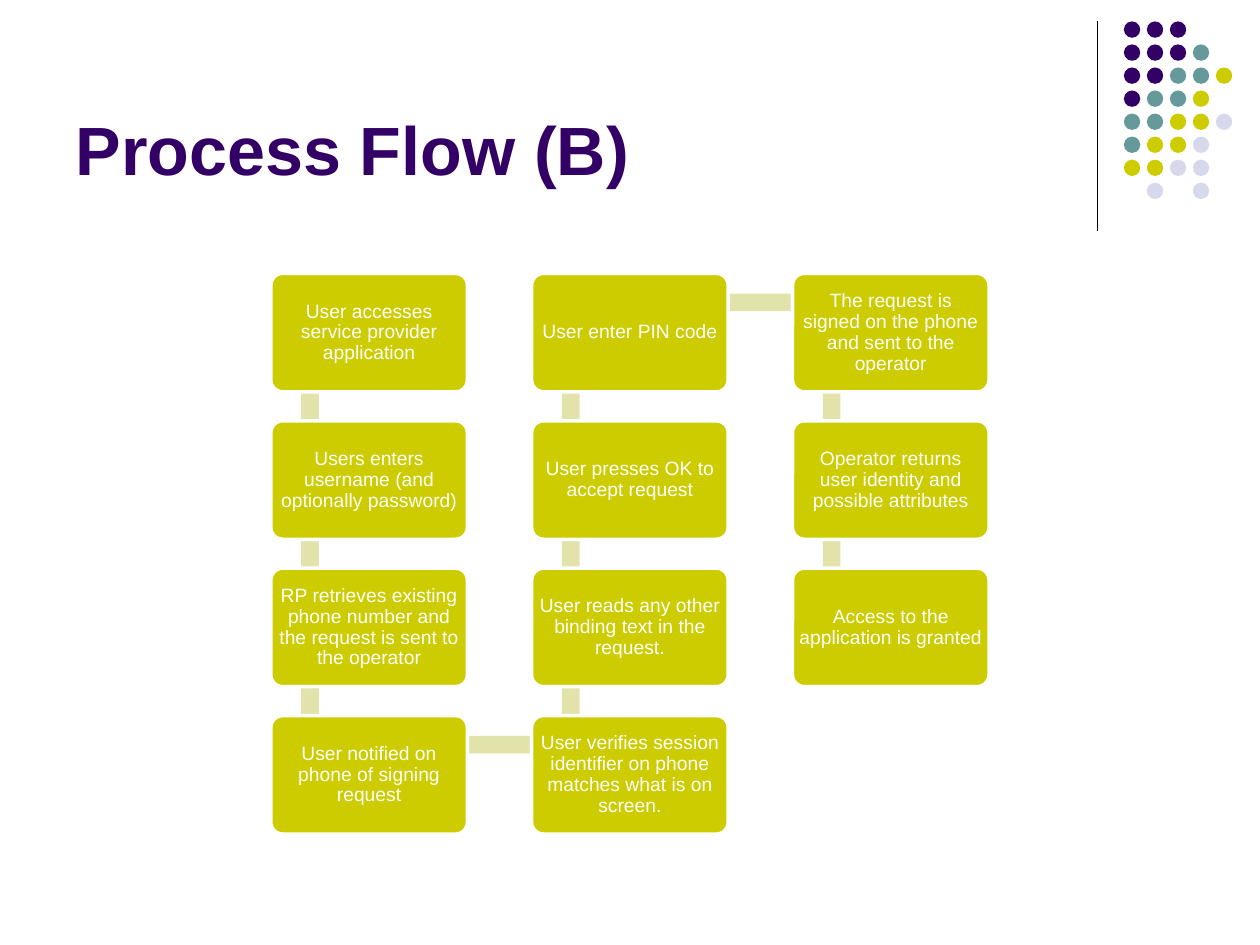
from dataclasses import dataclass

from lxml import etree
from pptx import Presentation
from pptx.dml.color import RGBColor
from pptx.enum.shapes import MSO_CONNECTOR, MSO_SHAPE
from pptx.enum.text import MSO_ANCHOR, MSO_AUTO_SIZE, PP_ALIGN
from pptx.oxml.ns import qn
from pptx.shapes.autoshape import Shape
from pptx.slide import Slide
from pptx.util import Inches, Pt

ELLIPSE, RECTANGLE = MSO_SHAPE.OVAL, MSO_SHAPE.RECTANGLE
ROUNDED, STRAIGHT = MSO_SHAPE.ROUNDED_RECTANGLE, MSO_CONNECTOR.STRAIGHT
BOTTOM, MIDDLE = MSO_ANCHOR.BOTTOM, MSO_ANCHOR.MIDDLE
LEFT, CENTER = PP_ALIGN.LEFT, PP_ALIGN.CENTER
NO_AUTOFIT = MSO_AUTO_SIZE.NONE

BLACK = RGBColor(0x00, 0x00, 0x00)
WHITE = RGBColor(0xFF, 0xFF, 0xFF)
PURPLE = RGBColor(0x33, 0x00, 0x66)
TEAL = RGBColor(0x66, 0x99, 0x99)
OLIVE = RGBColor(0xCC, 0xCC, 0x00)
LAVENDER = RGBColor(0xD8, 0xD8, 0xEC)
PALE_OLIVE = RGBColor(0xE2, 0xE2, 0xAB)


@dataclass(frozen=True)
class Grid:
    """Equal cells, in inches, placed at a fixed pitch."""
    left: float
    top: float
    column_pitch: float
    row_pitch: float
    width: float
    height: float

    def corner(self, column: int, row: int) -> tuple[float, float]:
        return (self.left + column * self.column_pitch,
                self.top + row * self.row_pitch)


@dataclass(frozen=True)
class Step:
    column: int
    row: int
    text: str


DOT_GRID = Grid(8.92, 0.17, 0.73 / 4, 1.28 / 7, 0.13, 0.13)
STEP_GRID = Grid(2.15, 2.17, 2.07, 1.17, 1.56, 0.94)
BAR_THICKNESS = 0.14

# One letter per dot, a space where there is none
DOT_ROWS = ["PPP", "PPPT", "PPTTO", "PTTO", "TTOOL", "TOOL", "OOLL", " L L"]
DOT_COLORS = {"P": PURPLE, "T": TEAL, "O": OLIVE, "L": LAVENDER}

# The flow runs down, up, then down again
STEPS = [
    Step(0, 0, "User accesses service provider application"),
    Step(0, 1, "Users enters username (and optionally password)"),
    Step(0, 2, "RP retrieves existing phone number and the request is sent "
               "to the operator"),
    Step(0, 3, "User notified on phone of signing request"),
    Step(1, 3, "User verifies session identifier on phone matches what is "
               "on screen."),
    Step(1, 2, "User reads any other binding text in the request."),
    Step(1, 1, "User presses OK to accept request"),
    Step(1, 0, "User enter PIN code"),
    Step(2, 0, "The request is signed on the phone and sent to the operator"),
    Step(2, 1, "Operator returns user identity and possible attributes"),
    Step(2, 2, "Access to the application is granted"),
]

TITLE_FONT = {"name": "Arial", "size": Pt(39), "bold": True}
STEP_FONT = {"name": "Arial", "size": Pt(11), "bold": False}
STEP_FRAME = {
    "word_wrap": True, "vertical_anchor": MIDDLE,
    # The rounded corners already inset the text a little
    "margin_left": Inches(0.02), "margin_right": Inches(0.02),
    "margin_top": Inches(0.02), "margin_bottom": Inches(0.02),
}
TITLE_FRAME = {"word_wrap": True, "vertical_anchor": BOTTOM,
               "auto_size": NO_AUTOFIT}


def apply_format(target: object, values: dict) -> None:
    for name, value in values.items():
        setattr(target, name, value)


def write_text(box: Shape, text: str, frame: dict, font: dict,
               color: RGBColor, align: PP_ALIGN) -> None:
    apply_format(box.text_frame, frame)
    para = box.text_frame.paragraphs[0]
    para.alignment = align
    span = para.add_run()
    span.text = text
    apply_format(span.font, font)
    span.font.color.rgb = color


def add_filled(page: Slide, kind: MSO_SHAPE, left: float, top: float,
               width: float, height: float, color: RGBColor) -> Shape:
    shape = page.shapes.add_shape(kind, Inches(left), Inches(top),
                                  Inches(width), Inches(height))
    shape.shadow.inherit = False
    shape.fill.solid()
    shape.fill.fore_color.rgb = color
    shape.line.fill.background()
    return shape


def add_title(page: Slide, text: str) -> None:
    title = page.shapes.title
    apply_format(title, {"left": Inches(0.5), "top": Inches(0.13),
                         "width": Inches(8.25), "height": Inches(1.42)})
    write_text(title, text, TITLE_FRAME, TITLE_FONT, PURPLE, LEFT)


def add_corner_ornament(page: Slide) -> None:
    rule = page.shapes.add_connector(STRAIGHT, Inches(8.71), Inches(0.17),
                                     Inches(8.71), Inches(1.83))
    rule.line.color.rgb = BLACK
    rule.line.width = Pt(0.75)
    etree.SubElement(rule.element.spPr, qn("a:effectLst"))
    for row, letters in enumerate(DOT_ROWS):
        for column, letter in enumerate(letters):
            if letter in DOT_COLORS:
                left, top = DOT_GRID.corner(column, row)
                add_filled(page, ELLIPSE, left, top, DOT_GRID.width,
                           DOT_GRID.height, DOT_COLORS[letter])


def add_bar(page: Slide, start: Step, end: Step) -> None:
    left, top = STEP_GRID.corner(start.column, min(start.row, end.row))
    if start.row == end.row:
        add_filled(page, RECTANGLE, left + 0.32, top + 0.16, 2.06,
                   BAR_THICKNESS, PALE_OLIVE)
    else:
        bar = add_filled(page, RECTANGLE, left - 0.27, top + 0.74, 1.16,
                         BAR_THICKNESS, PALE_OLIVE)
        bar.rotation = 90 if end.row > start.row else 270


def add_step(page: Slide, step: Step) -> None:
    left, top = STEP_GRID.corner(step.column, step.row)
    box = add_filled(page, ROUNDED, left, top, STEP_GRID.width,
                     STEP_GRID.height, OLIVE)
    box.adjustments[0] = 0.1
    box.line.color.rgb = WHITE
    box.line.width = Pt(2)
    write_text(box, step.text, STEP_FRAME, STEP_FONT, WHITE, CENTER)
    box.text_frame.paragraphs[0].line_spacing = 0.9


def main() -> None:
    deck = Presentation()
    deck.slide_width, deck.slide_height = Inches(10), Inches(7.5)
    page = deck.slides.add_slide(deck.slide_layouts[5])
    add_corner_ornament(page)
    add_title(page, "Process Flow (B)")
    # Bars go behind all the boxes
    for start, end in zip(STEPS, STEPS[1:]):
        add_bar(page, start, end)
    for step in STEPS:
        add_step(page, step)
    deck.save("out.pptx")


if __name__ == "__main__":
    main()
